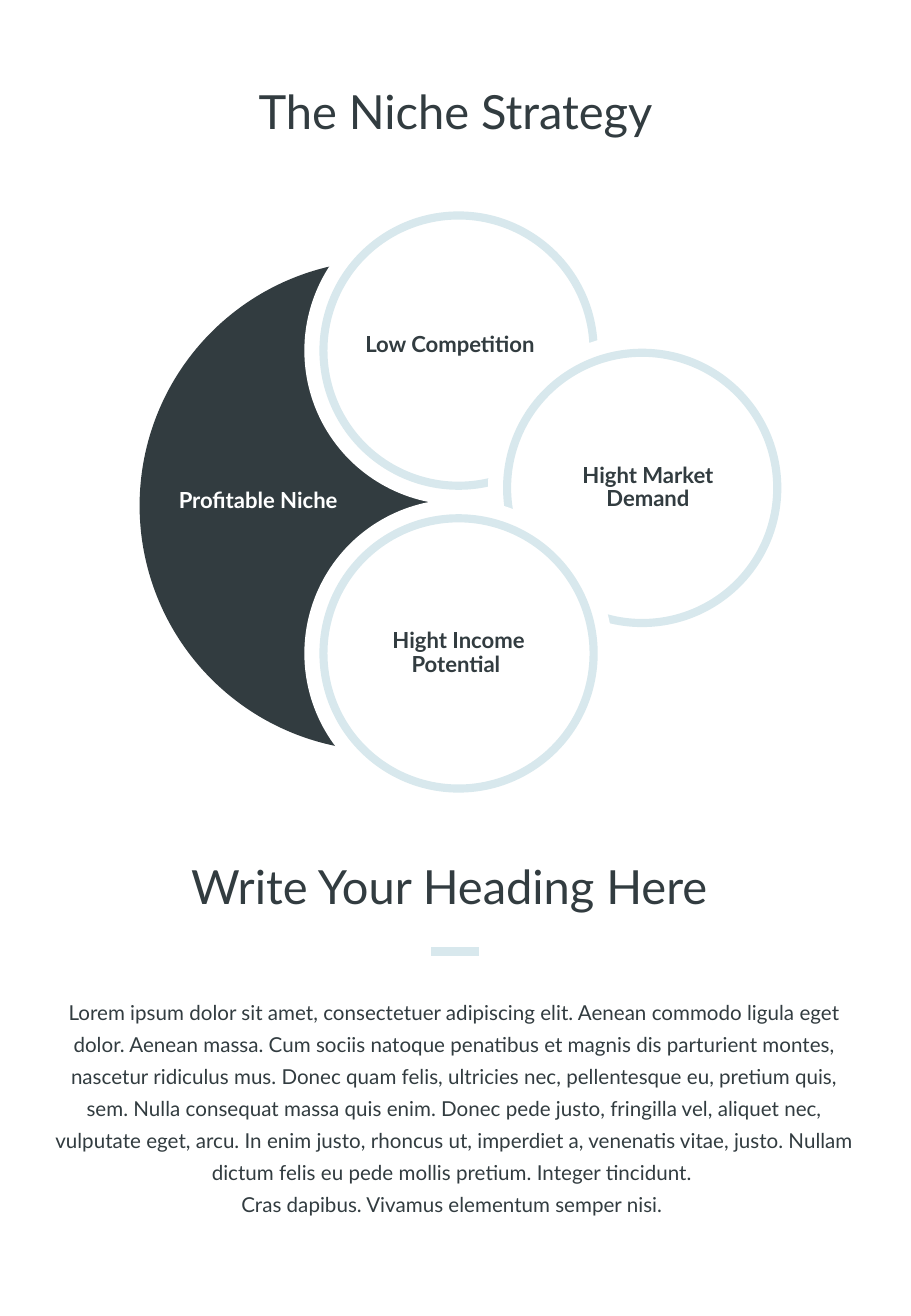
from dataclasses import dataclass

from pptx import Presentation
from pptx.dml.color import RGBColor
from pptx.enum.shapes import MSO_CONNECTOR as Connector
from pptx.enum.shapes import MSO_SHAPE as Preset
from pptx.enum.text import MSO_ANCHOR as Anchor
from pptx.enum.text import MSO_AUTO_SIZE as AutoSize
from pptx.enum.text import PP_ALIGN as Align
from pptx.oxml.ns import qn
from pptx.shapes.base import BaseShape
from pptx.slide import Slide
from pptx.util import Cm, Pt

COLOURS = {"dark": "323C40", "pale": "D8E8ED", "white": "FFFFFF"}
FONT = "Lato"

HALO_DIAMETER = 6.45
RING_DIAMETER = 5.82
RING_THICKNESS = 0.17
LABEL_WIDTH = 4.24

BODY_TEXT = (
    "Lorem ipsum dolor sit amet, consectetuer adipiscing elit. Aenean commodo "
    "ligula eget dolor. Aenean massa. Cum sociis natoque penatibus et magnis dis "
    "parturient montes, nascetur ridiculus mus. Donec quam felis, ultricies nec, "
    "pellentesque eu, pretium quis, sem. Nulla consequat massa quis enim. Donec "
    "pede justo, fringilla vel, aliquet nec, vulputate eget, arcu. In enim justo, "
    "rhoncus ut, imperdiet a, venenatis vitae, justo. Nullam dictum felis eu pede "
    "mollis pretium. Integer tincidunt. \n"
    "Cras dapibus. Vivamus elementum semper nisi. "
)


@dataclass
class Circle:
    """Centre of a ring with its white halo, in centimetres."""
    x: float
    y: float


@dataclass
class Label:
    """Bold label box of the diagram, in centimetres."""
    text: str
    left: float
    top: float
    height: float
    colour: str = "dark"


CIRCLES = [Circle(9.59, 7.33), Circle(13.43, 10.2), Circle(9.59, 13.66)]

LABELS = [
    Label("Profitable Niche", 3.28, 10.24, 0.48, "white"),
    Label("Low Competition", 7.29, 6.98, 0.48),
    Label("Hight Market Demand", 11.43, 9.58, 1.24),
    Label("Hight Income\nPotential ", 7.47, 13.03, 1.24),
]


def colour(name: str) -> RGBColor:
    return RGBColor.from_string(COLOURS[name])


def place(shape: BaseShape, left: float, top: float, width: float, height: float) -> None:
    shape.left, shape.top = Cm(left), Cm(top)
    shape.width, shape.height = Cm(width), Cm(height)


def write_text(shape: BaseShape, text: str, *, size: float, spacing: float,
               text_colour: str = "dark", bold: bool = False,
               anchor: Anchor = Anchor.MIDDLE) -> None:
    frame = shape.text_frame
    frame.word_wrap = True
    frame.auto_size = AutoSize.NONE
    frame.vertical_anchor = anchor
    frame.margin_left = frame.margin_right = frame.margin_top = frame.margin_bottom = 0
    frame.text = text
    for paragraph in frame.paragraphs:
        paragraph.alignment = Align.CENTER
        paragraph.line_spacing = spacing
        paragraph.space_before = paragraph.space_after = Pt(0)
        for run in paragraph.runs:
            run.font.name = FONT
            run.font.size = Pt(size)
            run.font.bold = bold
            run.font.color.rgb = colour(text_colour)


def remove_bullets(shape: BaseShape) -> None:
    for paragraph in shape.text_frame.paragraphs:
        properties = paragraph._p.get_or_add_pPr()
        properties.set("marL", "0")
        properties.set("indent", "0")
        properties.append(properties.makeelement(qn("a:buNone"), {}))


def add_round(slide: Slide, preset: Preset, x: float, y: float,
              diameter: float, fill: str) -> BaseShape:
    corner = Cm(x - diameter / 2), Cm(y - diameter / 2)
    shape = slide.shapes.add_shape(preset, *corner, Cm(diameter), Cm(diameter))
    shape.shadow.inherit = False
    shape.fill.solid()
    shape.fill.fore_color.rgb = colour(fill)
    shape.line.fill.background()
    return shape


def add_ring(slide: Slide, circle: Circle) -> None:
    add_round(slide, Preset.OVAL, circle.x, circle.y, HALO_DIAMETER, "white")
    ring = add_round(slide, Preset.DONUT, circle.x, circle.y, RING_DIAMETER, "pale")
    ring.adjustments[0] = RING_THICKNESS / RING_DIAMETER


def add_label(slide: Slide, label: Label) -> None:
    box = slide.shapes.add_textbox(Cm(label.left), Cm(label.top),
                                   Cm(LABEL_WIDTH), Cm(label.height))
    write_text(box, label.text, size=13.1, spacing=0.9,
               text_colour=label.colour, bold=True)


def add_divider(slide: Slide, left: float, right: float, y: float) -> None:
    line = slide.shapes.add_connector(Connector.STRAIGHT, Cm(left), Cm(y), Cm(right), Cm(y))
    line.line.color.rgb = colour("pale")
    line.line.width = Pt(5)
    properties = line._element.spPr
    properties.append(properties.makeelement(qn("a:effectLst"), {}))


def main() -> None:
    presentation = Presentation()
    presentation.slide_width, presentation.slide_height = Cm(19.05), Cm(27.51)
    slide = presentation.slides.add_slide(presentation.slide_layouts[1])
    title, body = slide.placeholders

    # Title
    place(title, 1.22, 1.93, 16.61, 0.97)
    write_text(title, "The Niche Strategy", size=27.9, spacing=0.8)

    # Diagram: dark disc, cut by the haloed rings
    add_round(slide, Preset.OVAL, 8.05, 10.57, 10.26, "dark")
    for circle in CIRCLES:
        add_ring(slide, circle)
    for label in LABELS:
        add_label(slide, label)

    # Heading with its divider
    heading = slide.shapes.add_textbox(Cm(1.14), Cm(18.14), Cm(16.76), Cm(0.97))
    write_text(heading, "Write Your Heading Here ", size=27.9, spacing=0.8)
    add_divider(slide, 9.02, 10.01, 19.89)

    # Body text
    place(body, 1.14, 20.75, 16.74, 4.67)
    write_text(body, BODY_TEXT, size=12.2, spacing=1.3, anchor=Anchor.TOP)
    remove_bullets(body)

    presentation.save("out.pptx")


if __name__ == "__main__":
    main()
